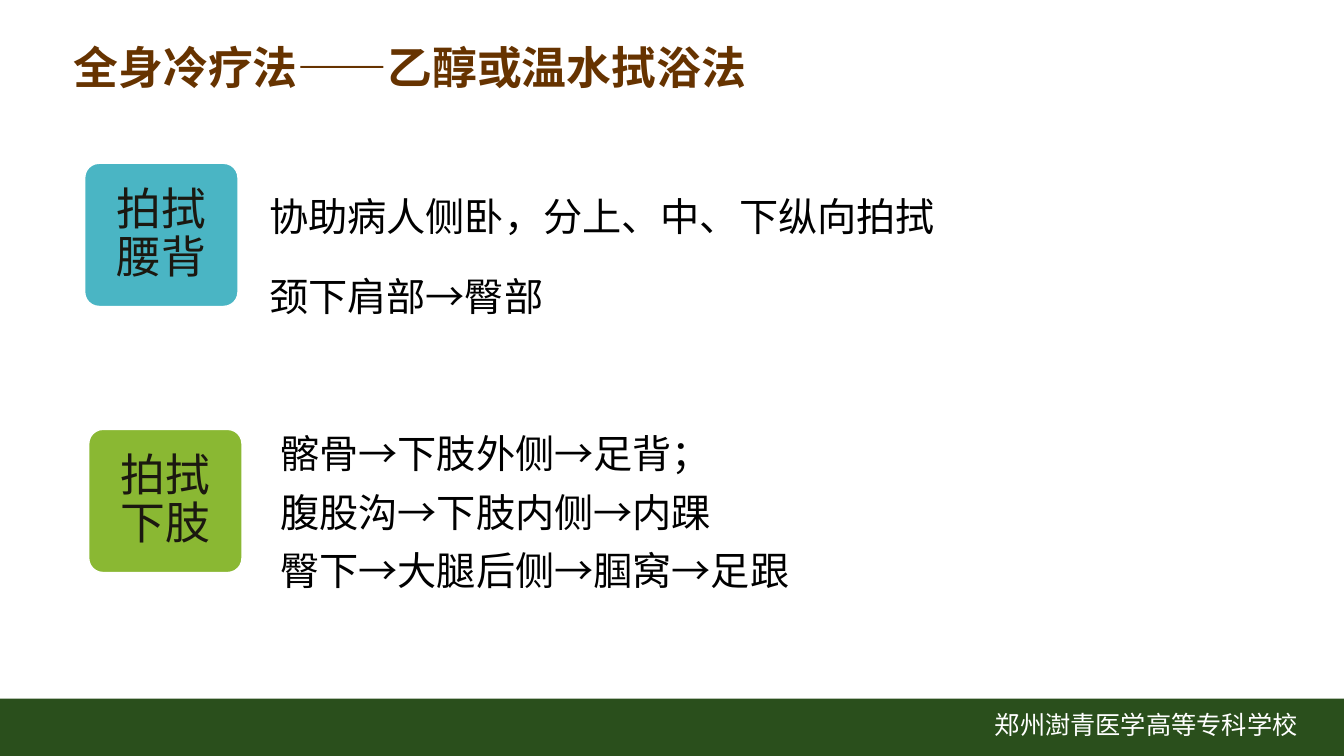
"""Build the slide on sponging the back and the legs."""
from dataclasses import dataclass
from typing import Any

from lxml import etree
from pptx import Presentation
from pptx import util as u
from pptx.dml import color
from pptx.enum import shapes, text
from pptx.oxml import ns

CELL = 0.1


@dataclass(frozen=True)
class Theme:
    """Colours, fonts and type sizes of the slide."""
    title: str = "663300"
    body: str = "000000"
    ink: str = "1B1810"
    white: str = "FFFFFF"
    back: str = "4AB5C4"
    legs: str = "8AB833"
    bar: str = "2A4F1C"
    arial: str = "Arial"
    noto: str = "Noto Sans CJK SC"
    large: int = 32
    mid: int = 28
    small: int = 18


@dataclass(frozen=True)
class Area:
    """A place on the grid, in columns and rows."""
    col: float
    row: float
    cols: float
    rows: float

    def box(self) -> dict[str, int]:
        """Give the place as slide lengths."""
        names = ("left", "top", "width", "height")
        cells = (self.col, self.row, self.cols, self.rows)
        return {name: u.Inches(cell * CELL) for name, cell in zip(names, cells)}


@dataclass(frozen=True)
class Style:
    """The look of a piece of text."""
    face: str
    size: int
    tint: str
    bold: bool = False
    lead: float = 1.0
    after: int = 0
    align: Any = text.PP_ALIGN.LEFT
    anchor: Any = text.MSO_ANCHOR.TOP


@dataclass(frozen=True)
class Card:
    """A coloured label."""
    area: Area
    fill: str
    label: str


@dataclass(frozen=True)
class Note:
    """Lines of text for one body placeholder."""
    slot: int
    area: Area
    lead: float
    lines: tuple[str, ...]


THEME = Theme()
CARDS = (
    Card(Area(8.4, 16.2, 15.2, 14.2), THEME.back, "拍拭腰背"),
    Card(Area(8.8, 42.6, 15.2, 14.2), THEME.legs, "拍拭下肢"),
)
NOTES = (
    Note(1, Area(25.7, 16.2, 97.6, 7.2), 1.5, ("协助病人侧卧，分上、中、下纵向拍拭",)),
    Note(2, Area(25.7, 24.2, 34.6, 7), 1.5, ("颈下肩部→臀部",)),
    Note(3, Area(26.8, 40.9, 57.2, 17.9), 1.25,
         ("髂骨→下肢外侧→足背；", "腹股沟→下肢内侧→内踝", "臀下→大腿后侧→腘窝→足跟")),
)


def put(item: Any, vals: dict[str, Any]) -> None:
    """Set each named value on an item."""
    for name, val in vals.items():
        setattr(item, name, val)


def write(shape: Any, lines: tuple[str, ...], style: Style) -> None:
    """Write styled paragraphs into a shape."""
    frame = shape.text_frame
    put(frame, {"text": "\n".join(lines), "word_wrap": True,
                "auto_size": text.MSO_AUTO_SIZE.NONE,
                "vertical_anchor": style.anchor})
    for para in frame.paragraphs:
        put(para, {"alignment": style.align, "line_spacing": style.lead,
                   "space_before": u.Pt(0), "space_after": u.Pt(style.after)})
        props = para._p.get_or_add_pPr()
        props.set("marL", "0")
        props.set("indent", "0")
        etree.SubElement(props, ns.qn("a:buNone"))
        for run in para.runs:
            put(run.font, {"name": style.face, "size": u.Pt(style.size),
                           "bold": style.bold})
            run.font.color.rgb = color.RGBColor.from_string(style.tint)
            east = etree.SubElement(run._r.get_or_add_rPr(), ns.qn("a:ea"))
            east.set("typeface", THEME.noto)


def block(slide: Any, kind: Any, area: Area, fill: str) -> Any:
    """Draw a filled shape without a line."""
    shape = slide.shapes.add_shape(kind, **area.box())
    shape.shadow.inherit = False
    shape.fill.solid()
    shape.fill.fore_color.rgb = color.RGBColor.from_string(fill)
    shape.line.fill.background()
    return shape


def label(slide: Any, card: Card) -> None:
    """Draw a label with rounded corners."""
    shape = block(slide, shapes.MSO_SHAPE.ROUNDED_RECTANGLE, card.area, card.fill)
    shape.adjustments[0] = 0.1
    shape.line.color.rgb = color.RGBColor.from_string(THEME.white)
    shape.line.width = u.Pt(1)
    sides = ("left", "right", "top", "bottom")
    put(shape.text_frame, {f"margin_{side}": u.Inches(0.17) for side in sides})
    write(shape, (card.label,),
          Style(THEME.arial, THEME.large, THEME.ink, lead=0.9, after=11,
                align=text.PP_ALIGN.CENTER, anchor=text.MSO_ANCHOR.MIDDLE))


def main() -> None:
    """Build and save the slide."""
    deck = Presentation()
    put(deck, {"slide_width": u.Inches(13.33), "slide_height": u.Inches(7.5)})
    slide = deck.slides.add_slide(deck.slide_layouts.get_by_name("Comparison"))

    block(slide, shapes.MSO_SHAPE.RECTANGLE, Area(0, 69.3, 133.3, 5.9), THEME.bar)
    school = slide.shapes.add_textbox(**Area(97.7, 69.9, 32.3, 5.1).box())
    write(school, ("郑州澍青医学高等专科学校",),
          Style(THEME.noto, THEME.small, THEME.white))

    title = slide.shapes.title
    put(title, Area(6.3, 3.4, 85, 6.4).box())
    write(title, ("全身冷疗法——乙醇或温水拭浴法",),
          Style(THEME.arial, THEME.large, THEME.title, bold=True))

    for card in CARDS:
        label(slide, card)

    slots = {hold.placeholder_format.idx: hold for hold in slide.placeholders}
    for note in NOTES:
        hold = slots.pop(note.slot)
        put(hold, note.area.box())
        write(hold, note.lines,
              Style(THEME.noto, THEME.mid, THEME.body, lead=note.lead))
    spare = slots[4].element
    spare.getparent().remove(spare)

    deck.save("out.pptx")


if __name__ == "__main__":
    main()
